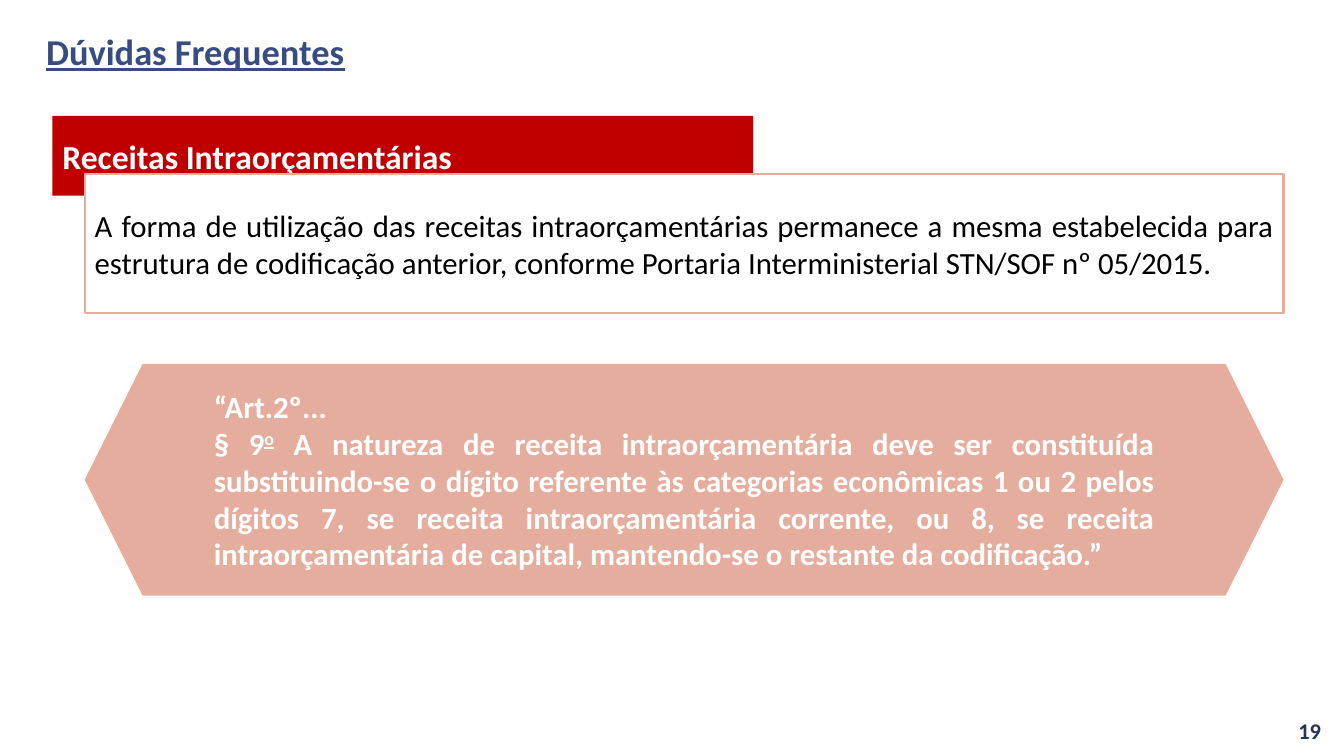
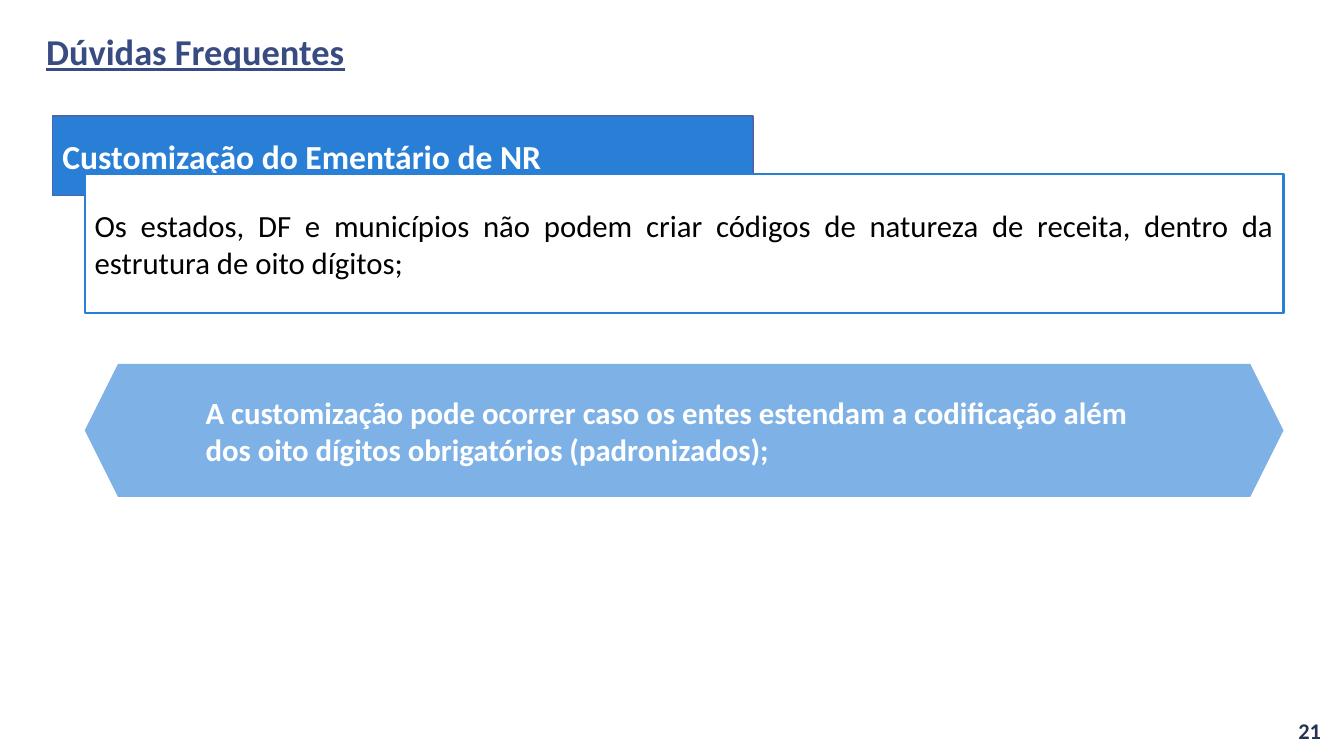
from pptx import Presentation
from pptx.dml.color import RGBColor
from pptx.enum import shapes, text
from pptx.util import Inches, Pt

FONT = "Calibri"
COLORS = {
    "title": "384C81", "number": "253356", "white": "FFFFFF", "black": "000000",
    "red": "C00000", "rose": "E4AD9E",
    "blue": "297FD5", "sky": "7EB2E6", "edge": "4A66AC",
}
ALIGN = text.PP_ALIGN
KIND = shapes.MSO_SHAPE


def rgb(name):
    return RGBColor.from_string(COLORS[name])


def write(shape, lines, size, color, bold=True, underline=None):
    """Fill a shape with (alignment, runs) lines; a run is (text, is_ordinal)."""
    frame = shape.text_frame
    frame.word_wrap = True
    frame.vertical_anchor = text.MSO_ANCHOR.MIDDLE
    for i, (align, runs) in enumerate(lines):
        para = frame.add_paragraph() if i else frame.paragraphs[0]
        para.alignment = align
        font = para.font
        font.name, font.size, font.bold = FONT, Pt(size), bold
        font.underline = underline
        font.color.rgb = rgb(color)
        for words, ordinal in runs:
            run = para.add_run()
            run.text = words
            if ordinal:
                run.font.underline = True
                run.font._element.set("baseline", "30000")


def plain(words, align=ALIGN.LEFT):
    return align, [(words, False)]


def add_label(slide, box, line, size, color, underline=None):
    label = slide.shapes.add_textbox(*map(Inches, box))
    write(label, [line], size, color, underline=underline)
    return label


def add_panel(slide, kind, box, fill, edge=None, width=1):
    panel = slide.shapes.add_shape(kind, *map(Inches, box))
    panel.shadow.inherit = False
    panel.fill.solid()
    panel.fill.fore_color.rgb = rgb(fill)
    if edge:
        panel.line.color.rgb = rgb(edge)
        panel.line.width = Pt(width)
    else:
        panel.line.fill.background()
    return panel


def add_page(deck, number):
    """Add a slide with the shared title and page number."""
    slide = deck.slides.add_slide(deck.slide_layouts[6])
    title = add_label(slide, (0.36, -0.19, 11.5, 1.45),
                      plain("Dúvidas Frequentes"), 26, "title", underline=True)
    title.text_frame.paragraphs[0].line_spacing = 0.9
    add_label(slide, (10.2, 7.05, 3, 0.4),
              plain(str(number), ALIGN.RIGHT), 16, "number")
    return slide


def add_topic(slide, head, body, fill, border, edge=None):
    """Add a coloured heading band overlapped by a framed statement."""
    band = add_panel(slide, KIND.RECTANGLE, (0.52, 1.15, 6.95, 0.79), fill, edge)
    write(band, [plain(head)], 24, "white")
    card = add_panel(slide, KIND.RECTANGLE, (0.84, 1.73, 11.89, 1.38),
                     "white", border, 1.5)
    write(card, [plain(body, ALIGN.JUSTIFY)], 22, "black", bold=False)


def add_quote(slide, height, fill, lines):
    quote = add_panel(slide, KIND.HEXAGON, (0.84, 3.61, 11.89, height), fill)
    write(quote, lines, 22, "white")


def main():
    deck = Presentation()
    deck.slide_width, deck.slide_height = Inches(13.33), Inches(7.5)

    slide = add_page(deck, 19)
    add_topic(slide, "Receitas Intraorçamentárias",
              "A forma de utilização das receitas intraorçamentárias permanece a "
              "mesma estabelecida para estrutura de codificação anterior, conforme "
              "Portaria Interministerial STN/SOF nº 05/2015.", "red", "rose")
    add_quote(slide, 2.3, "rose", [
        plain("“Art.2º..."),
        (ALIGN.JUSTIFY, [
            ("§ 9", False), ("o", True),
            (" A natureza de receita intraorçamentária deve ser constituída "
             "substituindo-se o dígito referente às categorias econômicas 1 ou 2 "
             "pelos dígitos 7, se receita intraorçamentária corrente, ou 8, se "
             "receita intraorçamentária de capital, mantendo-se o restante da "
             "codificação.”", False)]),
    ])

    slide = add_page(deck, 21)
    add_topic(slide, "Customização do Ementário de NR",
              "Os estados, DF e municípios não podem criar códigos de natureza de "
              "receita, dentro da estrutura de oito dígitos;", "blue", "blue", "edge")
    add_quote(slide, 1.32, "sky", [
        plain("A customização pode ocorrer caso os entes estendam a codificação "
              "além dos oito dígitos obrigatórios (padronizados);")])

    deck.save("out.pptx")


if __name__ == "__main__":
    main()
